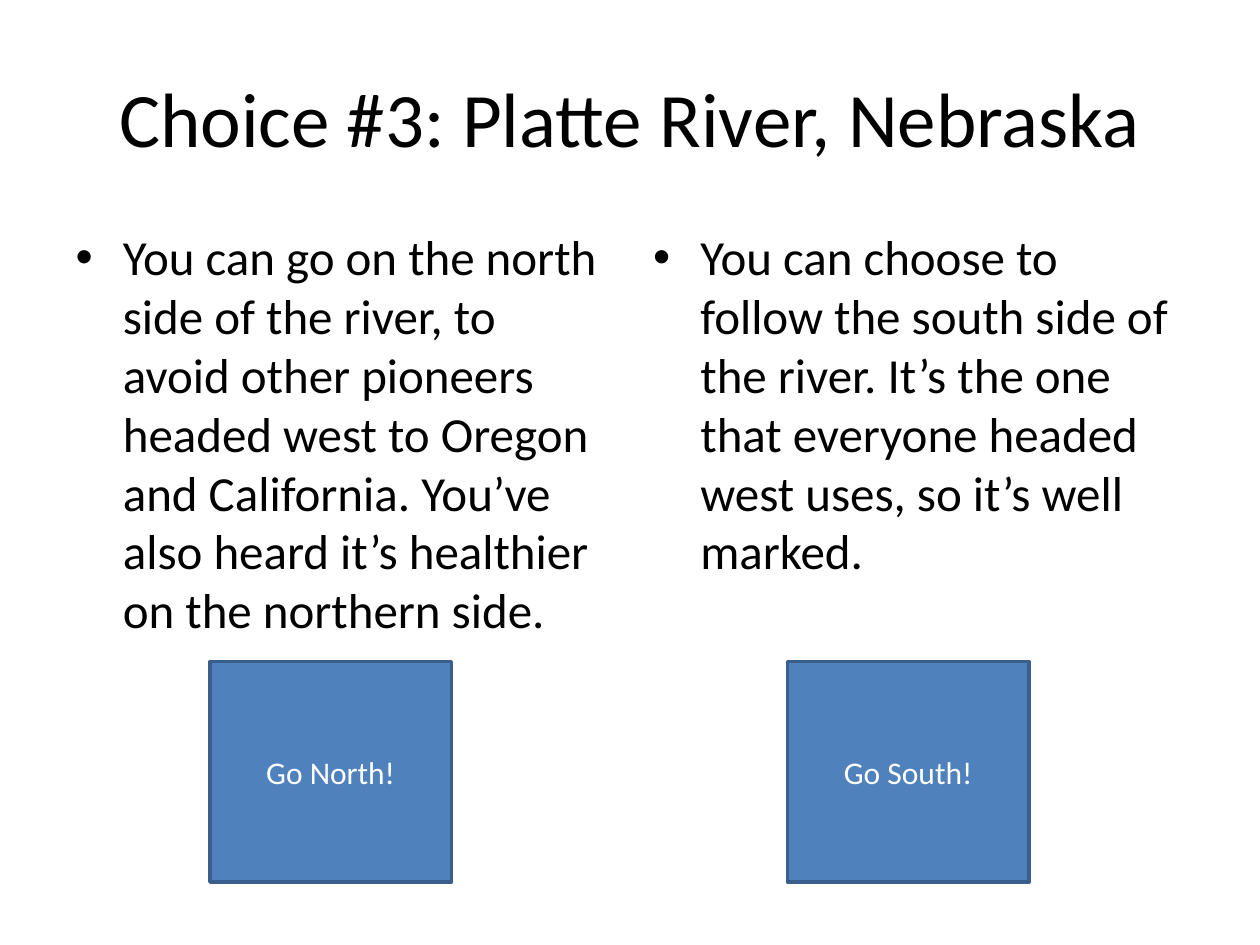
from pptx import Presentation
from pptx.dml.color import RGBColor
from pptx.enum.shapes import MSO_SHAPE
from pptx.enum.text import MSO_ANCHOR, PP_ALIGN
from pptx.util import Inches, Pt

CELL = 1 / 12
COLUMN_STEP = 55
CHOICES = [
    ("You can go on the north side of the river, to avoid other pioneers headed "
     "west to Oregon and California. You’ve also heard it’s healthier on the "
     "northern side.", "Go North!"),
    ("You can choose to follow the south side of the river. It’s the one that "
     "everyone headed west uses, so it’s well marked.", "Go South!"),
]


def paint(target, color):
    target.rgb = RGBColor.from_string(color)


def grid(*cells):
    return [Inches(cell * CELL) for cell in cells]


def write(box, text, size, color="000000", font="Calibri", align=None, anchor=None):
    frame = box.text_frame
    frame.word_wrap = True
    frame.vertical_anchor = anchor
    para = frame.paragraphs[0]
    para.alignment = align
    span = para.add_run()
    span.text = text
    span.font.size = Pt(size)
    span.font.name = font
    paint(span.font.color, color)


class ChoiceSlide:
    """Style and current slide, on a grid of 120 columns by 90 rows."""

    button_fill = "4F81BD"
    button_line = "3A5F8C"
    button_text = "FFFFFF"
    centred = {"align": PP_ALIGN.CENTER, "anchor": MSO_ANCHOR.MIDDLE}

    def __init__(self, deck):
        self.page = deck.slides.add_slide(deck.slide_layouts.get_by_name("Two Content"))
        self.title_box, *self.bodies = list(self.page.placeholders)[:3]

    def place(self, box, *cells):
        box.left, box.top, box.width, box.height = grid(*cells)

    def title(self, text):
        self.place(self.title_box, 6, 3.6, 108, 15)
        write(self.title_box, text, 44, **self.centred)

    def body(self, index, text):
        box = self.bodies[index]
        self.place(box, 6 + index * COLUMN_STEP, 21, 53, 59.4)
        write(box, text, 28)

    def button(self, index, text):
        cells = grid(20 + index * COLUMN_STEP, 63, 23, 21)
        box = self.page.shapes.add_shape(MSO_SHAPE.ACTION_BUTTON_CUSTOM, *cells)
        box.shadow.inherit = False
        box.fill.solid()
        paint(box.fill.fore_color, self.button_fill)
        paint(box.line.color, self.button_line)
        box.line.width = Pt(2)
        write(box, text, 18, self.button_text, **self.centred)


def main():
    deck = Presentation()
    deck.slide_width, deck.slide_height = grid(120, 90)
    slide = ChoiceSlide(deck)
    slide.title("Choice #3: Platte River, Nebraska")
    for index, (description, label) in enumerate(CHOICES):
        slide.body(index, description)
        slide.button(index, label)
    deck.save("out.pptx")


if __name__ == "__main__":
    main()
